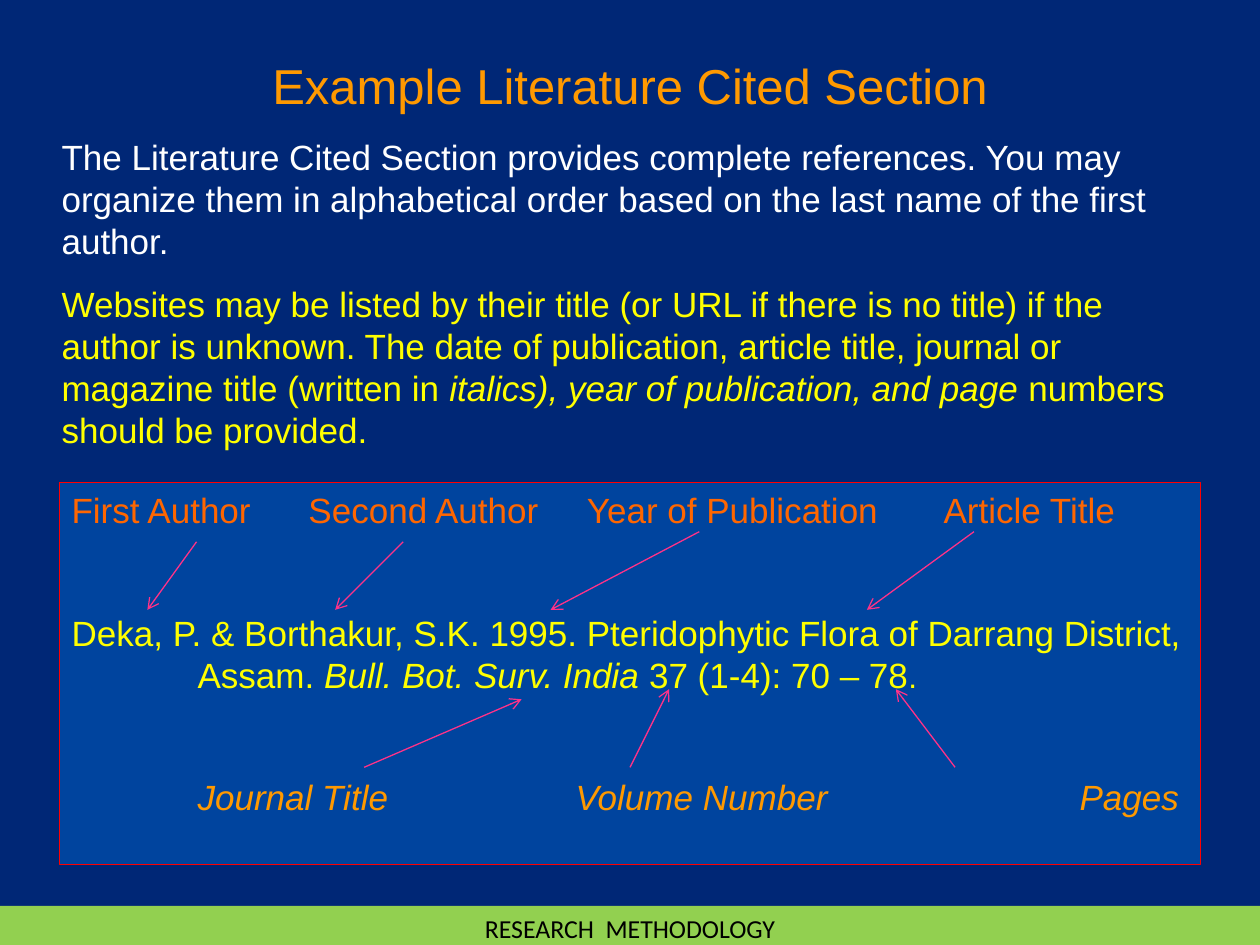
import pptx
import pptx.dml.color
import pptx.enum.shapes
import pptx.enum.text
import pptx.oxml
import pptx.util
from lxml import etree

Inches = pptx.util.Inches
Pt = pptx.util.Pt
ALIGN = pptx.enum.text.PP_ALIGN


class Theme:
    font, footer_font = "Arial", "Calibri"
    background, panel, footer = "002776", "00449E", "92D050"
    orange, label, yellow = "FF9900", "FF6600", "FFFF00"
    white, black, border, arrow = "FFFFFF", "000000", "FF0000", "FE3288"
    title_size, body_size, stop_size, footer_size = 28, 20, 18, 14.8
    line_width = 0.75


def rgb(value):
    return pptx.dml.color.RGBColor.from_string(value)


def add_panel(slide, left, top, width, height, fill, line=None):
    sp = slide.shapes.add_shape(
        pptx.enum.shapes.MSO_SHAPE.RECTANGLE,
        Inches(left), Inches(top), Inches(width), Inches(height))
    sp.shadow.inherit = False
    sp.fill.solid()
    sp.fill.fore_color.rgb = rgb(fill)
    if line:
        sp.line.color.rgb = rgb(line)
        sp.line.width = Pt(Theme.line_width)
    else:
        sp.line.fill.background()
    sp.text_frame.word_wrap = True
    sp.text_frame.vertical_anchor = pptx.enum.text.MSO_ANCHOR.TOP
    return sp.text_frame


def add_paragraph(tf, runs, color, size=Theme.body_size, font=Theme.font,
                  align=ALIGN.LEFT, before=0):
    """Fill the first empty paragraph or append one; runs are (text, italic)."""
    p = tf.add_paragraph() if tf.paragraphs[0].runs else tf.paragraphs[0]
    p.alignment = align
    p.space_before = Pt(before)
    p.font.name, p.font.size = font, Pt(size)
    p.font.color.rgb = rgb(color)
    for text, italic in runs:
        r = p.add_run()
        r.text = text
        r.font.name, r.font.size = font, Pt(size)
        r.font.color.rgb = rgb(color)
        r.font.italic = italic
    return p


def set_tabs(p, stops):
    ppr = p._p.get_or_add_pPr()
    tabs = etree.Element(pptx.oxml.ns.qn("a:tabLst"))
    for stop in stops:
        etree.SubElement(tabs, pptx.oxml.ns.qn("a:tab"),
                         pos=str(Inches(stop)), algn="l")
    # Tab stops come before the default run properties
    ppr.find(pptx.oxml.ns.qn("a:defRPr")).addprevious(tabs)


def add_arrow(slide, x1, y1, x2, y2):
    line = slide.shapes.add_connector(
        pptx.enum.shapes.MSO_CONNECTOR.STRAIGHT,
        Inches(x1), Inches(y1), Inches(x2), Inches(y2))
    line.line.color.rgb = rgb(Theme.arrow)
    line.line.width = Pt(Theme.line_width)
    etree.SubElement(line.line._get_or_add_ln(),
                     pptx.oxml.ns.qn("a:tailEnd"), type="arrow")
    etree.SubElement(line._element.spPr, pptx.oxml.ns.qn("a:effectLst"))


def add_introduction(slide):
    tf = slide.shapes.add_textbox(
        Inches(0.39), Inches(0.39), Inches(9.22), Inches(3.26)).text_frame
    tf.word_wrap = True
    add_paragraph(tf, [("Example Literature Cited Section", False)],
                  Theme.orange, Theme.title_size, align=ALIGN.CENTER)
    add_paragraph(tf, [(
        "The Literature Cited Section provides complete references. You may "
        "organize them in alphabetical order based on the last name of the "
        "first author.", False)], Theme.white, before=12)
    add_paragraph(tf, [
        ("Websites may be listed by their title (or URL if there is no title) "
         "if the author is unknown. The date of publication, article title, "
         "journal or magazine title (written in ", False),
        ("italics), year of publication, and page ", True),
        ("numbers should be provided.", False)], Theme.yellow, before=12)


def add_citation(slide):
    tf = add_panel(slide, 0.47, 3.83, 9.06, 3.03, Theme.panel, Theme.border)
    gap = 46  # room for the arrows

    p = add_paragraph(tf, [(
        "First Author\tSecond Author\tYear of Publication\tArticle Title",
        False)], Theme.label)
    set_tabs(p, [1.88, 4.09, 6.92])

    p = add_paragraph(tf, [
        ("Deka, P. & Borthakur, S.K. 1995. Pteridophytic Flora of Darrang "
         "District, Assam. ", False),
        ("Bull. Bot. Surv. India ", True),
        ("37 (1-4): 70 – 78", False),
        (".", False)], Theme.yellow, before=gap)
    p.runs[-1].font.size = Pt(Theme.stop_size)
    # Hanging indent for the second line of the reference
    ppr = p._p.get_or_add_pPr()
    ppr.set("marL", str(Inches(1)))
    ppr.set("indent", str(-Inches(1)))

    p = add_paragraph(tf, [("\tJournal Title\tVolume Number\tPages", True)],
                      Theme.orange, before=gap)
    set_tabs(p, [1, 4, 8])


def add_arrows(slide):
    # Upper labels point down to the reference
    for x1, y1, x2 in [(1.56, 4.3, 1.17), (3.2, 4.3, 2.66),
                       (5.55, 4.22, 4.37), (7.73, 4.22, 6.88)]:
        add_arrow(slide, x1, y1, x2, 4.84)
    # Lower labels point up to it
    for x1, x2, y2 in [(2.89, 4.14, 5.55), (5, 5.31, 5.47),
                       (7.58, 7.11, 5.47)]:
        add_arrow(slide, x1, 6.09, x2, y2)


def add_footer(slide):
    tf = add_panel(slide, 0, 7.19, 10, 0.31, Theme.footer)
    add_paragraph(tf, [("RESEARCH  METHODOLOGY", False)], Theme.black,
                  Theme.footer_size, Theme.footer_font, ALIGN.CENTER)


def main():
    prs = pptx.Presentation()
    prs.slide_width, prs.slide_height = Inches(10), Inches(7.5)
    slide = prs.slides.add_slide(prs.slide_layouts[6])
    slide.background.fill.solid()
    slide.background.fill.fore_color.rgb = rgb(Theme.background)

    add_footer(slide)
    add_introduction(slide)
    add_citation(slide)
    add_arrows(slide)
    prs.save("out.pptx")


if __name__ == "__main__":
    main()
